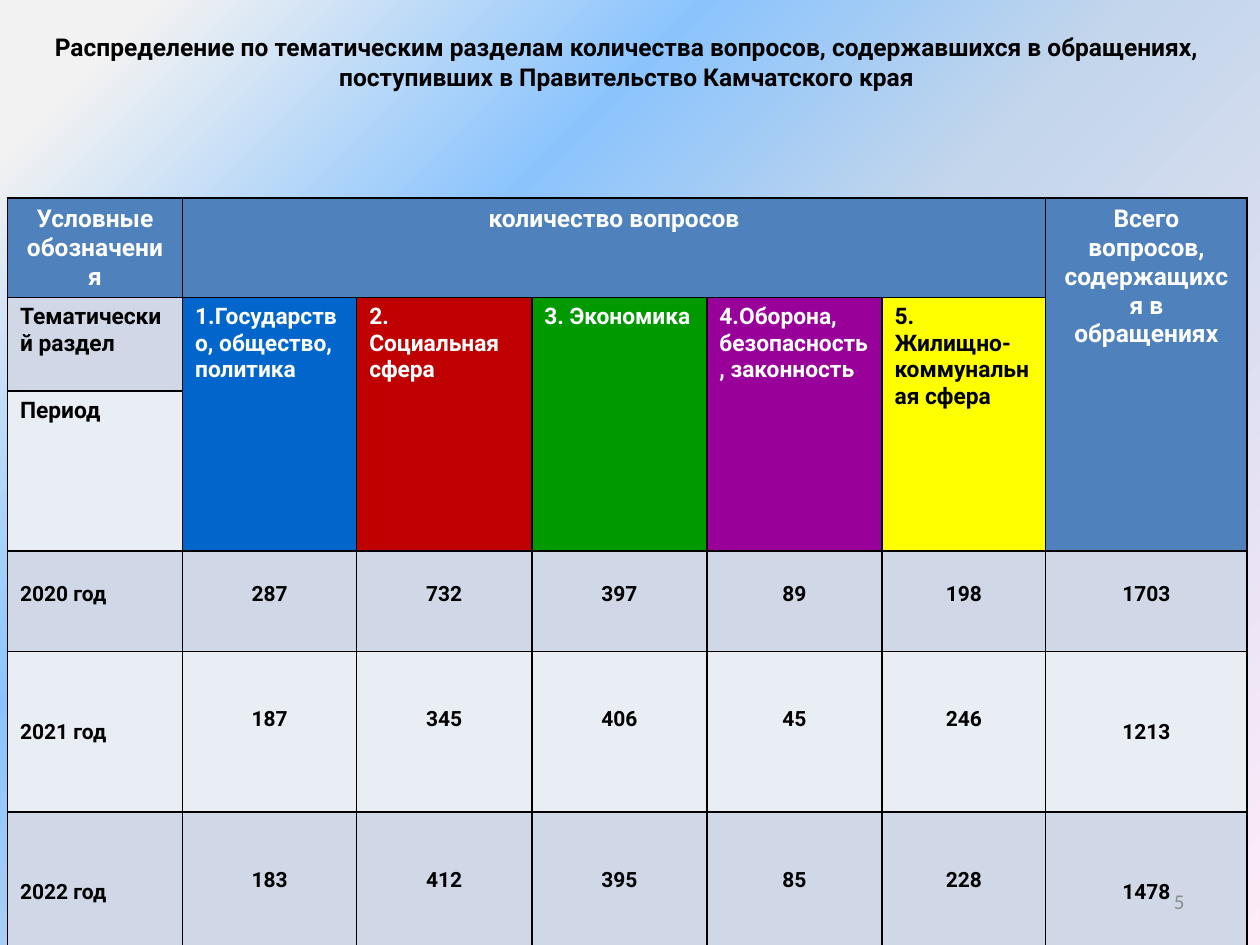
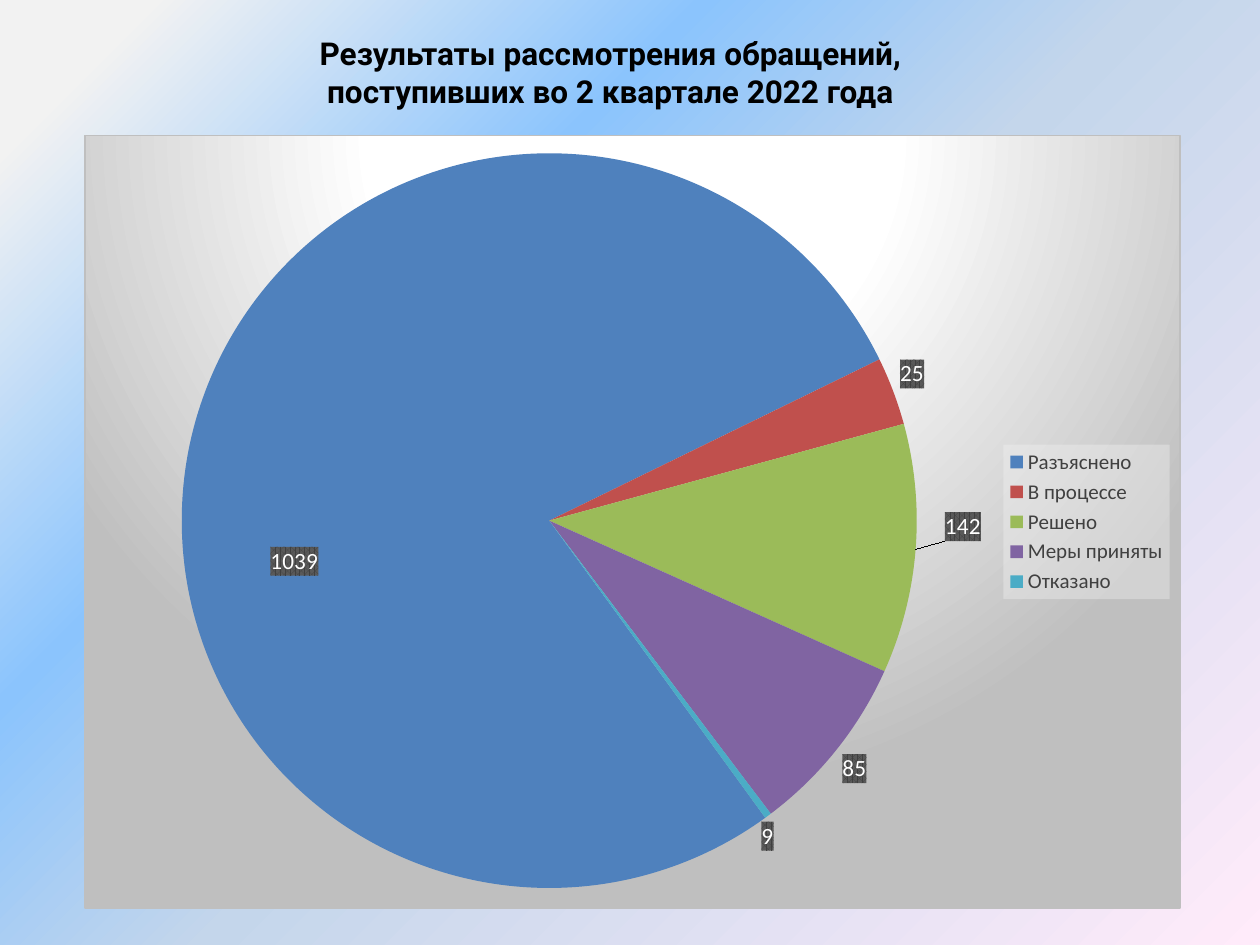
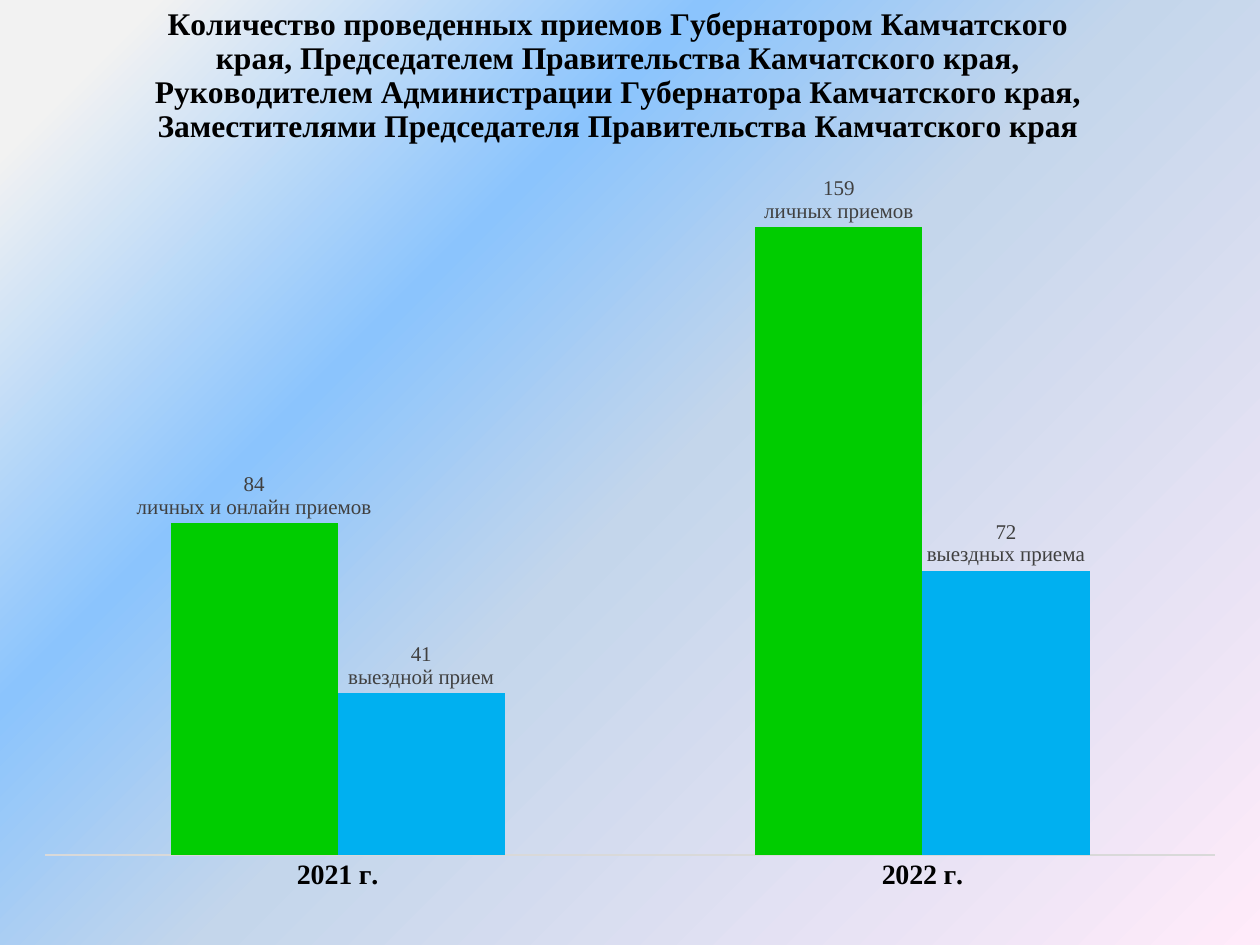
from pptx import Presentation
from pptx.chart.data import CategoryChartData
from pptx.dml.color import RGBColor
from pptx.enum.chart import XL_CHART_TYPE, XL_LABEL_POSITION, XL_LEGEND_POSITION, XL_TICK_MARK
from pptx.enum.text import MSO_ANCHOR, MSO_AUTO_SIZE, PP_ALIGN
from pptx.oxml import parse_xml
from pptx.oxml.ns import nsdecls, qn
from pptx.util import Cm, Pt

COLORS = {
    "black": "000000", "white": "FFFFFF", "grey_text": "404040", "page": "8C8C8C",
    "header": "4F81BD", "band_dark": "D0D8E8", "band_light": "E9EDF4",
    "state": "0066CC", "social": "C00000", "economy": "009900",
    "defence": "990099", "housing": "FFFF00", "frame": "BFBFBF", "axis": "D9D9D9",
    "personal": "00CC00", "visiting": "00B0F0",
}
BACKGROUND = [(7, "F2F2F2"), (32, "8BC4FD"), (52, "C4D6EB"), (100, "FFEBFA")]
PIE_BACKGROUND = [(0, "FFFFFF"), (39, "FFFFFF"), (100, "BFBFBF")]


def gradient(stops, direction):
    """Gradient fill markup from (percent, colour) stops."""
    marks = "".join(f'<a:gs pos="{pos * 1000}"><a:srgbClr val="{color}"/></a:gs>' for pos, color in stops)
    return f'<a:gradFill {nsdecls("a")} rotWithShape="1"><a:gsLst>{marks}</a:gsLst>{direction}</a:gradFill>'


def chart_part(tag, content):
    """Chart element with the given tag: 'spPr' or a manual 'layout'."""
    if tag == "layout":
        marks = "".join(f'<c:{key} val="{value}"/>' for key, value in content.items())
        content = f"<c:manualLayout>{marks}</c:manualLayout>"
    return parse_xml(f'<c:{tag} {nsdecls("c", "a")}>{content}</c:{tag}>')


prs = Presentation()
prs.slide_width, prs.slide_height = Cm(25.4), Cm(19.05)
rgb = {name: RGBColor.from_string(value) for name, value in COLORS.items()}

# Shared background
master = prs.slide_master
master.background.fill.solid()
plain_fill = master._element.find(".//" + qn("a:solidFill"))
plain_fill.getparent().replace(
    plain_fill, parse_xml(gradient(BACKGROUND, '<a:lin ang="2700000" scaled="0"/>')))

# Titles of the first two slides
titles = [
    ("Распределение по тематическим разделам количества вопросов, содержавшихся в обращениях, "
     "поступивших в Правительство Камчатского края",
     (-0.18, -0.76, 25.63, 4.01), 14, MSO_ANCHOR.MIDDLE),
    ("Результаты рассмотрения обращений,\nпоступивших во 2 квартале 2022 года",
     (2.31, 0.56, 19.99, 1.8), 18, MSO_ANCHOR.TOP),
]
titled_slides = []
for wording, box, size, anchor in titles:
    slide = prs.slides.add_slide(prs.slide_layouts[5])
    heading = slide.shapes.title
    heading.left, heading.top, heading.width, heading.height = map(Cm, box)
    frame = heading.text_frame
    frame.text = wording
    frame.auto_size = MSO_AUTO_SIZE.NONE
    frame.vertical_anchor = anchor
    for paragraph in frame.paragraphs:
        paragraph.alignment = PP_ALIGN.CENTER
        paragraph.font.name, paragraph.font.size, paragraph.font.bold = "Roboto", Pt(size), True
        paragraph.font.color.rgb = rgb["black"]
    titled_slides.append(slide)
topics_slide, results_slide = titled_slides

# Slide 1: questions by topic
column_widths = [3.53, 3.51, 3.53, 3.53, 3.53, 3.3, 4.06]
row_heights = [2.01, 1.88, 3.23, 2.03, 3.23, 3.23]
questions = topics_slide.shapes.add_table(
    6, 7, Cm(0.15), Cm(3.99), Cm(sum(column_widths)), Cm(sum(row_heights))).table
for column, width in zip(questions.columns, column_widths):
    column.width = Cm(width)
for row, height in zip(questions.rows, row_heights):
    row.height = Cm(height)

# (row, column): wording, fill, font colour, size, alignment
cells = {
    (0, 0): ("Условные обозначения", "header", "white", 14, PP_ALIGN.CENTER),
    (0, 1): ("количество вопросов", "header", "white", 14, PP_ALIGN.CENTER),
    (0, 6): ("Всего вопросов, содержащихся в обращениях", "header", "white", 14, PP_ALIGN.CENTER),
    (1, 0): ("Тематический раздел", "band_dark", "black", 13, PP_ALIGN.LEFT),
    (2, 0): ("Период", "band_light", "black", 13, PP_ALIGN.LEFT),
}
topics = [
    ("1.Государство, общество, политика", "state", "white"),
    ("2. Социальная сфера", "social", "white"),
    ("3. Экономика", "economy", "white"),
    ("4.Оборона, безопасность, законность", "defence", "white"),
    ("5. Жилищно-коммунальная сфера", "housing", "black"),
]
for c, topic in enumerate(topics, 1):
    cells[1, c] = (*topic, 13, PP_ALIGN.LEFT)
years = [
    ("2020 год", 287, 732, 397, 89, 198, 1703),
    ("2021 год", 187, 345, 406, 45, 246, 1213),
    ("2022 год", 183, 412, 395, 85, 228, 1478),
]
for r, year in enumerate(years, 3):
    band = "band_light" if r == 4 else "band_dark"
    for c, value in enumerate(year):
        cells[r, c] = (str(value), band, "black", 12, PP_ALIGN.CENTER if c else PP_ALIGN.LEFT)

for (r, c), (wording, fill, color, size, alignment) in cells.items():
    cell = questions.cell(r, c)
    cell.text = wording
    cell.fill.solid()
    cell.fill.fore_color.rgb = rgb[fill]
    paragraph = cell.text_frame.paragraphs[0]
    paragraph.alignment = alignment
    paragraph.font.name, paragraph.font.size, paragraph.font.bold = "Roboto", Pt(size), True
    paragraph.font.color.rgb = rgb[color]
    if r > 3 and c in (0, 6):
        cell.vertical_anchor = MSO_ANCHOR.MIDDLE
    elif r >= 3:
        cell.margin_top = Cm(0.62 if r == 3 else 1.12)

questions.cell(0, 1).merge(questions.cell(0, 5))
questions.cell(0, 6).merge(questions.cell(2, 6))
for c in range(1, 6):
    questions.cell(1, c).merge(questions.cell(2, c))

# Cell borders
for cell in questions.iter_cells():
    properties = cell._tc.get_or_add_tcPr()
    for position, side in enumerate(("lnL", "lnR", "lnT", "lnB")):
        properties.insert(position, parse_xml(
            f'<a:{side} {nsdecls("a")} w="12700"><a:solidFill>'
            f'<a:srgbClr val="{COLORS["black"]}"/></a:solidFill></a:{side}>'))

# Page number
page_frame = topics_slide.shapes.add_textbox(Cm(18.21), Cm(17.65), Cm(5.92), Cm(1.02)).text_frame
page_frame.word_wrap = True
page_frame.vertical_anchor = MSO_ANCHOR.MIDDLE
page_number = page_frame.paragraphs[0]
page_number.text = "5"
page_number.alignment = PP_ALIGN.RIGHT
page_number.font.name, page_number.font.size = "Calibri", Pt(12)
page_number.font.color.rgb = rgb["page"]

# Slide 2: results of consideration
results_data = CategoryChartData()
results_data.categories = ["Разъяснено", "В процессе", "Решено", "Меры приняты", "Отказано"]
results_data.add_series("Series 1", (78, 3, 11, 8, 0.3))
results = results_slide.shapes.add_chart(
    XL_CHART_TYPE.PIE, Cm(1.7), Cm(2.72), Cm(22.1), Cm(15.6), results_data).chart
results.has_title = False
results.font.name, results.font.size = "Calibri", Pt(10)
results._chartSpace.chart.addnext(chart_part("spPr", gradient(
    PIE_BACKGROUND,
    '<a:path path="circle"><a:fillToRect l="50000" t="-80000" r="50000" b="180000"/></a:path>')
    + f'<a:ln w="9525"><a:solidFill><a:srgbClr val="{COLORS["frame"]}"/></a:solidFill></a:ln>'))

results.has_legend = True
legend = results.legend
legend.position = XL_LEGEND_POSITION.RIGHT
legend.include_in_layout = False
legend.font.name, legend.font.size = "Calibri", Pt(12)
legend.font.color.rgb = rgb["grey_text"]
legend._element.find(qn("c:overlay")).addnext(chart_part(
    "spPr", '<a:solidFill><a:srgbClr val="F2F2F2"><a:alpha val="39000"/></a:srgbClr></a:solidFill>'))

pie = results.plots[0]
pie.vary_by_categories = True
pie._element.append(parse_xml(f'<c:firstSliceAng {nsdecls("c")} val="144"/>'))
for extra in pie._element.findall(qn("c:firstSliceAng"))[:-1]:
    pie._element.remove(extra)
outcomes = pie.series[0]
outcomes.data_labels.show_value = True
# Label, slice colour, label shift
slices = [
    ("1039", "4F81BD", (-0.07, 0.11)), ("25", "C0504D", None), ("142", "9BBB59", (0.02, -0.03)),
    ("85", "8064A2", None), ("9", "4BACC6", (-0.01, 0)),
]
for i, (count, color, shift) in enumerate(slices):
    point = outcomes.points[i]
    point.format.fill.solid()
    point.format.fill.fore_color.rgb = RGBColor.from_string(color)
    label = point.data_label
    label.text_frame.text = count
    font = label.text_frame.paragraphs[0].runs[0].font
    font.name, font.size, font.bold = "Calibri", Pt(13.3), False
    font.color.rgb = rgb["white"]
    label.position = XL_LABEL_POSITION.OUTSIDE_END if i else XL_LABEL_POSITION.CENTER
    markup = label._get_or_add_dLbl()
    markup.find(qn("c:tx")).addnext(chart_part(
        "spPr", '<a:pattFill prst="pct75"><a:fgClr><a:srgbClr val="404040"/></a:fgClr>'
                '<a:bgClr><a:srgbClr val="595959"/></a:bgClr></a:pattFill>'))
    if shift:
        markup.find(qn("c:idx")).addnext(chart_part("layout", {"x": shift[0], "y": shift[1]}))

# Slide 3: receptions held
receptions_slide = prs.slides.add_slide(prs.slide_layouts[6])
receptions_data = CategoryChartData()
receptions_data.categories = ["2021 г.", "2022 г."]
receptions_data.add_series("Series 1", (84, 159))
receptions_data.add_series("Series 2", (41, 72))
receptions = receptions_slide.shapes.add_chart(
    XL_CHART_TYPE.COLUMN_CLUSTERED, Cm(0.3), Cm(-0.03), Cm(24.61), Cm(18.31), receptions_data).chart
receptions.has_legend = False
receptions.font.name, receptions.font.size = "Calibri", Pt(10)
receptions._chartSpace.chart.addnext(chart_part("spPr", "<a:noFill/><a:ln><a:noFill/></a:ln>"))

receptions.has_title = True
title_frame = receptions.chart_title.text_frame
title_frame.text = ("Количество проведенных приемов Губернатором Камчатского края, "
                    "Председателем Правительства Камчатского края, "
                    "Руководителем Администрации Губернатора Камчатского края, "
                    "Заместителями Председателя Правительства Камчатского края")
title_font = title_frame.paragraphs[0].runs[0].font
title_font.name, title_font.size, title_font.bold = "Times New Roman", Pt(18), True
title_font.color.rgb = rgb["black"]

# Places of the title and the plot
placements = [
    (receptions.chart_title._element, 1, {"xMode": "edge", "yMode": "edge", "x": 0.11, "y": 0}),
    (receptions._chartSpace.chart.plotArea, 0,
     {"layoutTarget": "inner", "xMode": "edge", "yMode": "edge",
      "x": 0.025, "y": 0.204, "w": 0.958, "h": 0.739}),
    (results._chartSpace.chart.plotArea, 0,
     {"layoutTarget": "inner", "xMode": "edge", "yMode": "edge",
      "x": 0.088, "y": 0.023, "w": 0.672, "h": 0.951}),
]
for parent, position, place in placements:
    for automatic in parent.findall(qn("c:layout")):
        parent.remove(automatic)
    parent.insert(position, chart_part("layout", place))

# Axes
years_axis = receptions.category_axis
years_axis.major_tick_mark = XL_TICK_MARK.NONE
years_axis.format.line.color.rgb = rgb["axis"]
years_axis.format.line.width = Pt(1)
years_font = years_axis.tick_labels.font
years_font.name, years_font.size, years_font.bold = "Times New Roman", Pt(16), True
years_font.color.rgb = rgb["black"]
counts_axis = receptions.value_axis
counts_axis.minimum_scale, counts_axis.maximum_scale, counts_axis.major_unit = 0, 170, 10
counts_axis.has_major_gridlines = False
counts_axis.visible = False

# Columns and their labels
columns = receptions.plots[0]
columns.gap_width, columns.overlap = 150, 0
columns.vary_by_categories = False
reception_kinds = [
    ("personal", ["84\nличных и онлайн приемов", "159\nличных приемов"]),
    ("visiting", ["41\nвыездной прием", "72\nвыездных приема"]),
]
for series, (color, wordings) in zip(columns.series, reception_kinds):
    series.format.fill.solid()
    series.format.fill.fore_color.rgb = rgb[color]
    series.data_labels.show_value = True
    for i, wording in enumerate(wordings):
        label = series.points[i].data_label
        label.text_frame.text = wording
        label.position = XL_LABEL_POSITION.OUTSIDE_END
        for paragraph in label.text_frame.paragraphs:
            font = paragraph.runs[0].font
            font.name, font.size, font.bold = "Times New Roman", Pt(12), False
            font.color.rgb = rgb["grey_text"]

prs.save("out.pptx")
